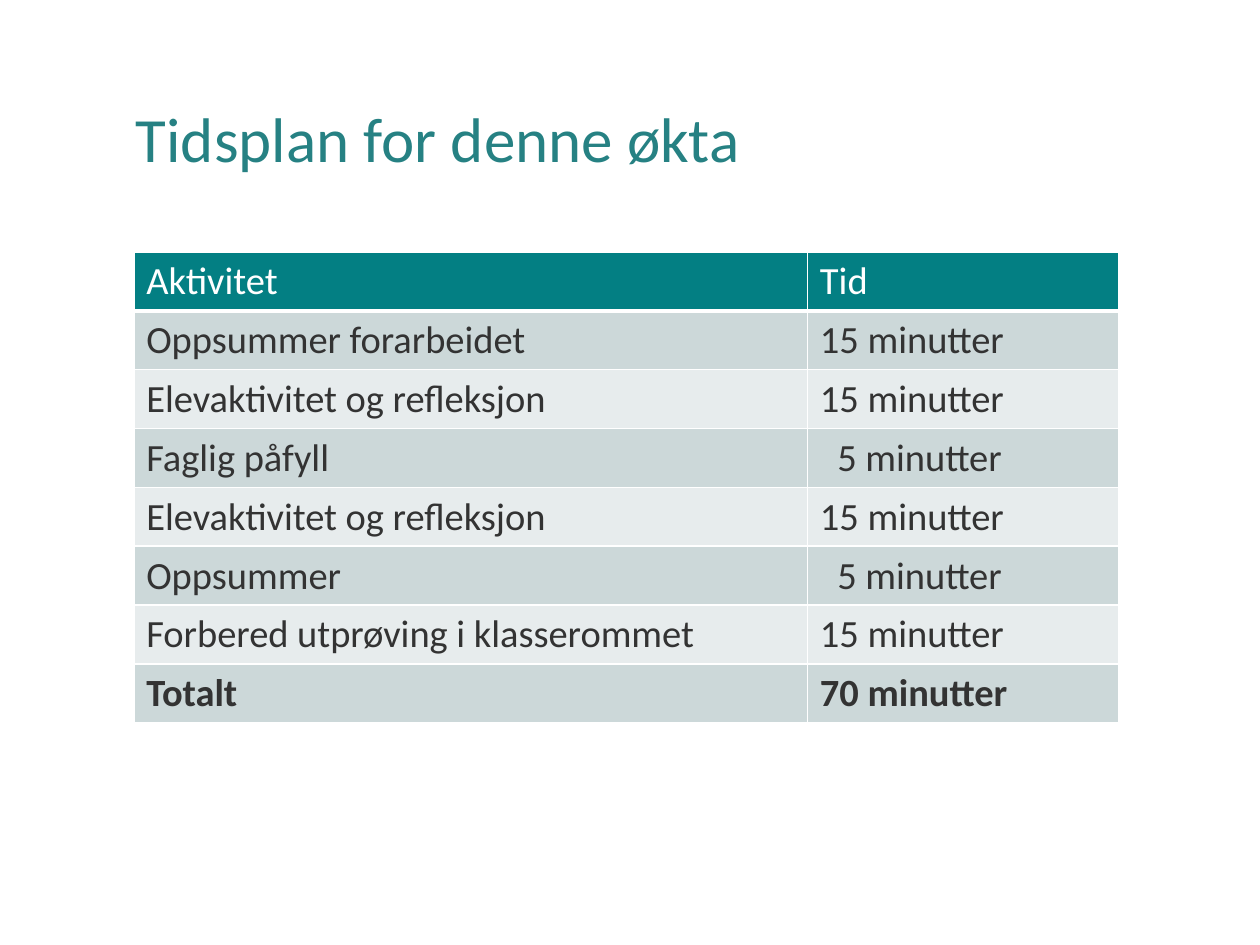
from dataclasses import dataclass
from typing import Any

import pptx
import pptx.dml.color
import pptx.enum.text
import pptx.oxml
import pptx.oxml.ns
import pptx.util
from pptx.util import Cm, Pt


@dataclass(frozen=True)
class Theme:
    font: str = "Calibri"
    title_size: int = 36
    table_size: int = 22
    title: str = "268183"
    header: str = "037F83"
    bands: tuple[str, str] = ("CCD8D9", "E7ECED")
    text: str = "333333"
    white: str = "FFFFFF"
    border: int = 1
    header_border: int = 3


@dataclass(frozen=True)
class Activity:
    name: str
    minutes: int
    bold: bool = False


THEME = Theme()
ACTIVITIES = [
    Activity("Oppsummer forarbeidet", 15),
    Activity("Elevaktivitet og refleksjon", 15),
    Activity("Faglig påfyll", 5),
    Activity("Elevaktivitet og refleksjon", 15),
    Activity("Oppsummer", 5),
    Activity("Forbered utprøving i klasserommet", 15),
    Activity("Totalt", 70, bold=True),
]
COLUMN_WIDTHS = (Cm(13.58), Cm(6.27))
ROW_HEIGHT = Cm(1.18)
CELL_MARGIN = Cm(0.25)
DIGIT_INDENT = Cm(0.35)


def write_text(paragraph: Any, text: str, size: int, color: str, bold: bool = False) -> None:
    run = paragraph.add_run()
    run.text = text
    font_format = {"name": THEME.font, "size": Pt(size), "bold": bold}
    for attribute, value in font_format.items():
        setattr(run.font, attribute, value)
    run.font.color.rgb = pptx.dml.color.RGBColor.from_string(color)


def add_borders(cell: Any, widths: dict[str, int]) -> None:
    properties = cell._tc.get_or_add_tcPr()
    namespace = pptx.oxml.ns.nsdecls("a")
    for side, width in widths.items():
        properties.append(pptx.oxml.parse_xml(
            f'<a:ln{side} {namespace} w="{Pt(width)}"><a:solidFill>'
            f'<a:srgbClr val="{THEME.white}"/></a:solidFill></a:ln{side}>'))


def fill_cell(cell: Any, text: str, fill: str, color: str, bold: bool,
              borders: dict[str, int], indent: int = 0) -> None:
    add_borders(cell, borders)
    cell.fill.solid()
    cell.fill.fore_color.rgb = pptx.dml.color.RGBColor.from_string(fill)
    cell.margin_left = CELL_MARGIN + indent
    write_text(cell.text_frame.paragraphs[0], text, THEME.table_size, color, bold)


def add_title(slide: Any, text: str) -> None:
    shape = slide.shapes.add_textbox(Cm(2.49), Cm(1.02), Cm(21.06), Cm(3.68))
    frame_format = {"word_wrap": True, "vertical_anchor": pptx.enum.text.MSO_ANCHOR.MIDDLE}
    for attribute, value in frame_format.items():
        setattr(shape.text_frame, attribute, value)
    paragraph = shape.text_frame.paragraphs[0]
    paragraph.line_spacing = 0.9
    write_text(paragraph, text, THEME.title_size, THEME.title)


def add_schedule(slide: Any, headings: tuple[str, str], activities: list[Activity]) -> None:
    row_count = len(activities) + 1
    table = slide.shapes.add_table(row_count, len(COLUMN_WIDTHS), Cm(2.7), Cm(5.08),
                                   sum(COLUMN_WIDTHS), ROW_HEIGHT * row_count).table
    for column, width in zip(table.columns, COLUMN_WIDTHS):
        column.width = width

    # Header row
    plain = dict.fromkeys("LRTB", THEME.border)
    for index, heading in enumerate(headings):
        fill_cell(table.cell(0, index), heading, THEME.header, THEME.white, False,
                  plain | {"B": THEME.header_border})

    # Banded activity rows; single digits are indented
    for row, activity in enumerate(activities, start=1):
        fill = THEME.bands[(row - 1) % 2]
        borders = plain | {"T": THEME.header_border} if row == 1 else plain
        indent = DIGIT_INDENT if activity.minutes < 10 else 0
        fill_cell(table.cell(row, 0), activity.name, fill, THEME.text, activity.bold, borders)
        fill_cell(table.cell(row, 1), f"{activity.minutes} minutter", fill, THEME.text,
                  activity.bold, borders, indent)


def main() -> None:
    presentation = pptx.Presentation()
    presentation.slide_width = Cm(25.4)
    presentation.slide_height = Cm(19.05)
    slide = presentation.slides.add_slide(presentation.slide_layouts[6])
    add_title(slide, "Tidsplan for denne økta")
    add_schedule(slide, ("Aktivitet", "Tid"), ACTIVITIES)
    presentation.save("out.pptx")


if __name__ == "__main__":
    main()
